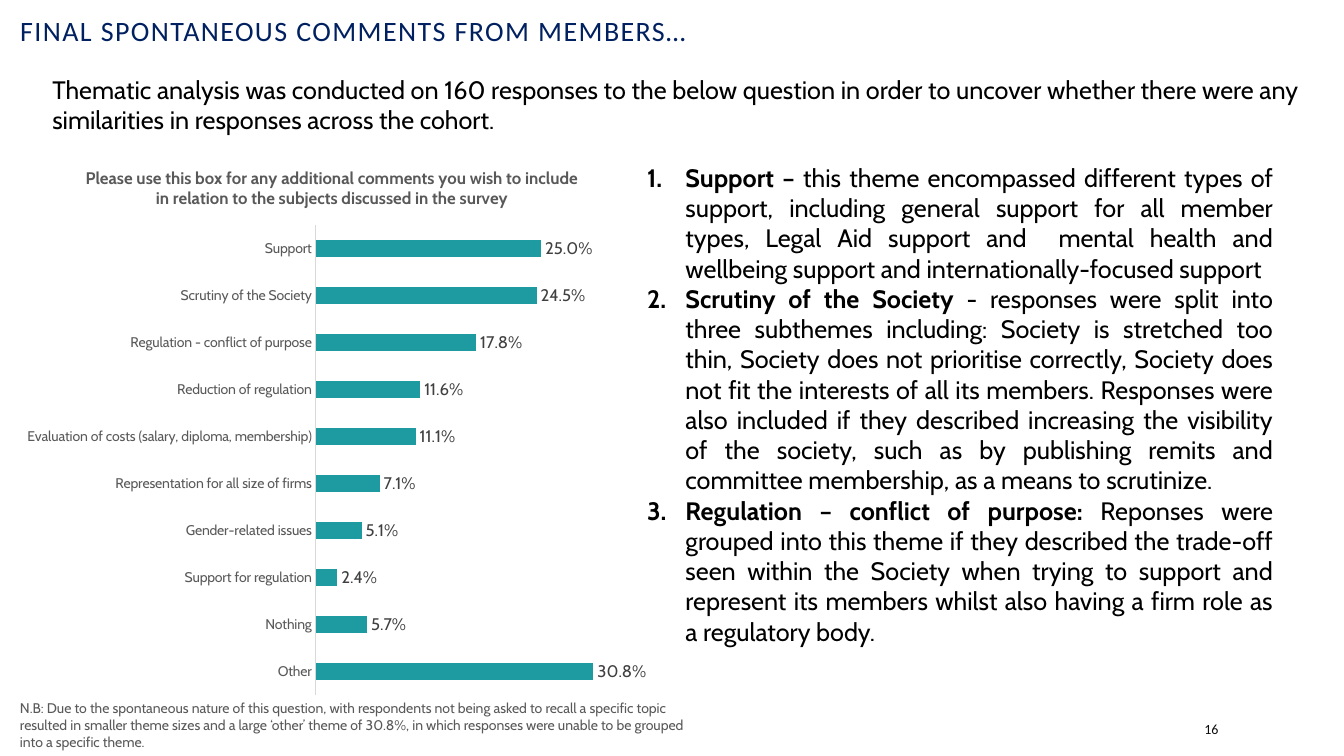
from dataclasses import dataclass

from lxml import etree
from pptx import Presentation
from pptx.chart.data import CategoryChartData
from pptx.dml.color import RGBColor
from pptx.enum.chart import XL_CHART_TYPE, XL_LABEL_POSITION, XL_TICK_MARK
from pptx.enum.text import MSO_ANCHOR, MSO_AUTO_SIZE, PP_ALIGN
from pptx.oxml.ns import qn
from pptx.util import Inches, Pt

BAR = XL_CHART_TYPE.BAR_CLUSTERED
OUTSIDE_END = XL_LABEL_POSITION.OUTSIDE_END
NO_TICK = XL_TICK_MARK.NONE
TOP, MIDDLE = MSO_ANCHOR.TOP, MSO_ANCHOR.MIDDLE
NO_FIT = MSO_AUTO_SIZE.NONE
LEFT, JUSTIFY = PP_ALIGN.LEFT, PP_ALIGN.JUSTIFY

WIDTH, HEIGHT = Inches(13.33), Inches(7.5)
COLS, ROWS = 160, 90
COLORS = {"navy": "002060", "teal": "1D9BA1", "black": "000000", "ink": "0D0D0D",
          "label": "404040", "grey": "595959", "axis": "D9D9D9"}
PERCENT = "0.0%"


@dataclass(frozen=True)
class Box:
    col: float
    row: float
    cols: float
    rows: float

    def emu(self) -> tuple[int, int, int, int]:
        return (int(WIDTH * self.col / COLS), int(HEIGHT * self.row / ROWS),
                int(WIDTH * self.cols / COLS), int(HEIGHT * self.rows / ROWS))


@dataclass(frozen=True)
class Style:
    size: float
    color: str
    name: str = "Cabin"
    bold: bool = False


@dataclass(frozen=True)
class Note:
    box: Box
    text: str
    style: Style
    anchor: int = TOP


@dataclass(frozen=True)
class Theme:
    heading: str
    detail: str


TITLE = Note(Box(1.2, 1.32, 112.2, 5.4), "FINAL SPONTANEOUS COMMENTS FROM MEMBERS…",
             Style(20, "navy", "Calibri"), MIDDLE)
NOTES = [
    Note(Box(5.04, 8.28, 151.08, 8.52),
         "Thematic analysis was conducted on 160 responses to the below question in order to "
         "uncover whether there were any similarities in responses across the cohort.",
         Style(18, "black")),
    Note(Box(1.2, 82.68, 81.84, 7.32),
         "N.B: Due to the spontaneous nature of this question, with respondents not being asked "
         "to recall a specific topic resulted in smaller theme sizes and a large ‘other’ theme of "
         "30.8%, in which responses were unable to be grouped into a specific theme.",
         Style(10, "grey")),
    Note(Box(142.2, 84.96, 12.72, 3.6), "16", Style(10, "ink", "Calibri"), MIDDLE),
]

THEMES_BOX = Box(75.84, 18.72, 76.92, 59.4)
THEMES = [
    Theme("Support – ",
          "this theme encompassed different types of support, including general support for all "
          "member types, Legal Aid support and  mental health and wellbeing support and "
          "internationally-focused support"),
    Theme("Scrutiny of the Society ",
          "- responses were split into three subthemes including: Society is stretched too thin, "
          "Society does not prioritise correctly, Society does not fit the interests of all its "
          "members. Responses were also included if they described increasing the visibility of "
          "the society, such as by publishing remits and committee membership, as a means to "
          "scrutinize."),
    Theme("Regulation – conflict of purpose: ",
          "Reponses were grouped into this theme if they described the trade-off seen within the "
          "Society when trying to support and represent its members whilst also having a firm "
          "role as a regulatory body. "),
]

CHART_BOX = Box(2.04, 17.52, 75, 66.72)
PLOT_AREA = {"x": 0.474, "y": 0.139, "w": 0.501, "h": 0.839}
QUESTION = ("Please use this box for any additional comments you wish to include in relation "
            "to the subjects discussed in the survey")
SHARES = {
    "Other": 0.308,
    "Nothing": 0.057,
    "Support for regulation": 0.024,
    "Gender-related issues": 0.051,
    "Representation for all size of firms": 0.071,
    "Evaluation of costs (salary, diploma, membership)": 0.111,
    "Reduction of regulation": 0.116,
    "Regulation - conflict of purpose": 0.178,
    "Scrutiny of the Society": 0.245,
    "Support": 0.25,
}


def rgb(color: str) -> RGBColor:
    return RGBColor.from_string(COLORS[color])


def assign(target, values: dict) -> None:
    for key, value in values.items():
        setattr(target, key, value)


def apply_style(font, style: Style) -> None:
    assign(font, {"size": Pt(style.size), "name": style.name, "bold": style.bold})
    font.color.rgb = rgb(style.color)


def place(sp, box: Box) -> None:
    assign(sp, dict(zip(("left", "top", "width", "height"), box.emu())))


def add_run(p, text: str, style: Style):
    r = p.add_run()
    r.text = text
    apply_style(r.font, style)
    return r


def fill_note(sp, note: Note):
    tf = sp.text_frame
    assign(tf, {"word_wrap": True, "auto_size": NO_FIT, "vertical_anchor": note.anchor})
    p = tf.paragraphs[0]
    p.alignment = LEFT
    return p, add_run(p, note.text, note.style)


def add_title(s) -> None:
    sp = s.shapes.title
    place(sp, TITLE.box)
    p, r = fill_note(sp, TITLE)
    p.line_spacing = 0.8
    r.font._element.set("spc", "100")


def add_themes(s) -> None:
    sp = s.placeholders[1]
    place(sp, THEMES_BOX)
    tf = sp.text_frame
    assign(tf, {"word_wrap": True, "auto_size": NO_FIT, "vertical_anchor": TOP})
    indent = Inches(0.38)
    for i, theme in enumerate(THEMES):
        p = tf.add_paragraph() if i else tf.paragraphs[0]
        pPr = p._p.get_or_add_pPr()
        assign(p, {"alignment": JUSTIFY, "space_before": Pt(0)})
        pPr.set("marL", str(indent))
        pPr.set("indent", str(-indent))
        etree.SubElement(pPr, qn("a:buFont"), typeface="+mj-lt")
        etree.SubElement(pPr, qn("a:buAutoNum"), type="arabicPeriod")
        add_run(p, theme.heading, Style(18, "black", bold=True))
        add_run(p, theme.detail, Style(18, "black"))


def set_plot_area(chart) -> None:
    plot_area = chart._chartSpace.find(".//" + qn("c:plotArea"))
    for old in plot_area.findall(qn("c:layout")):
        plot_area.remove(old)
    layout = etree.Element(qn("c:layout"))
    manual = etree.SubElement(layout, qn("c:manualLayout"))
    modes = {"layoutTarget": "inner", "xMode": "edge", "yMode": "edge"}
    for tag, value in {**modes, **PLOT_AREA}.items():
        etree.SubElement(manual, qn(f"c:{tag}"), val=str(value))
    plot_area.insert(0, layout)


def add_share_chart(s) -> None:
    data = CategoryChartData(number_format=PERCENT)
    data.categories = list(SHARES)
    data.add_series("Series 1", list(SHARES.values()))
    chart = s.shapes.add_chart(BAR, *CHART_BOX.emu(), data).chart
    chart.has_legend = False
    apply_style(chart.font, Style(10, "black"))
    chart.has_title = True
    add_run(chart.chart_title.text_frame.paragraphs[0], QUESTION, Style(12, "grey", bold=True))
    set_plot_area(chart)

    axis = chart.category_axis
    assign(axis, {"major_tick_mark": NO_TICK, "minor_tick_mark": NO_TICK,
                  "has_major_gridlines": False})
    apply_style(axis.tick_labels.font, Style(10, "grey"))
    axis.format.line.color.rgb = rgb("axis")
    axis.format.line.width = Pt(0.75)
    assign(chart.value_axis, {"visible": False, "has_major_gridlines": False,
                              "minimum_scale": 0, "maximum_scale": 0.35})

    plot = chart.plots[0]
    assign(plot, {"gap_width": 182, "vary_by_categories": False, "has_data_labels": True})
    assign(plot.data_labels, {"show_value": True, "position": OUTSIDE_END,
                              "number_format": PERCENT, "number_format_is_linked": False})
    apply_style(plot.data_labels.font, Style(12, "label"))
    fill = plot.series[0].format.fill
    fill.solid()
    fill.fore_color.rgb = rgb("teal")


def main() -> None:
    prs = Presentation()
    assign(prs, {"slide_width": WIDTH, "slide_height": HEIGHT})
    s = prs.slides.add_slide(prs.slide_layouts[1])
    add_title(s)
    add_share_chart(s)
    add_themes(s)
    for note in NOTES:
        fill_note(s.shapes.add_textbox(*note.box.emu()), note)
    prs.save("out.pptx")


if __name__ == "__main__":
    main()
